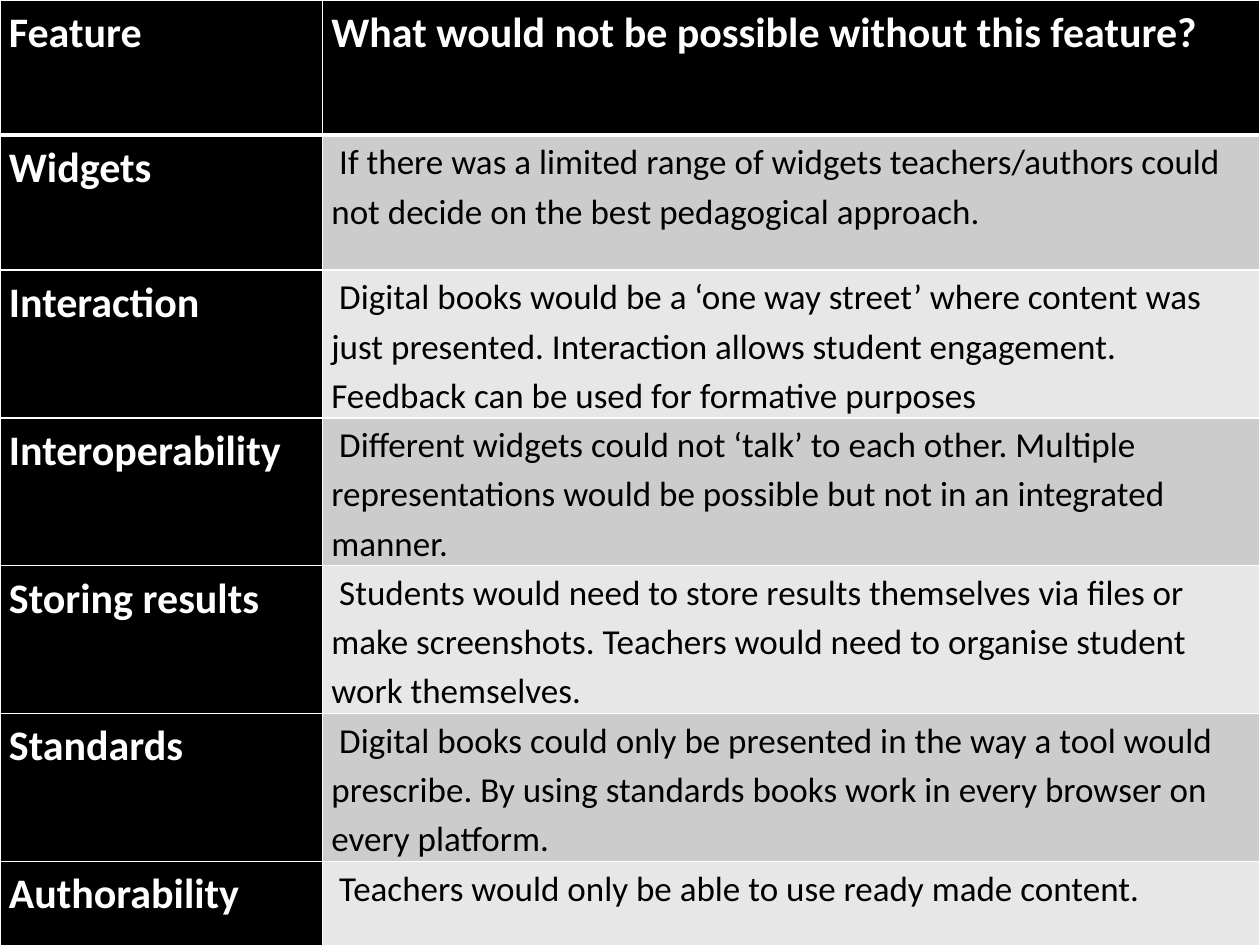
import pptx
import pptx.dml.color
import pptx.oxml
import pptx.oxml.ns
import pptx.util

Cm = pptx.util.Cm
Pt = pptx.util.Pt
RGBColor = pptx.dml.color.RGBColor

HEADER = ("Feature", "What would not be possible without this feature?")
FEATURES = [
    ("Widgets", " If there was a limited range of widgets teachers/authors could "
     "not decide on the best pedagogical approach."),
    ("Interaction", " Digital books would be a ‘one way street’ where content was "
     "just presented. Interaction allows student engagement. "
     "Feedback can be used for formative purposes"),
    ("Interoperability", " Different widgets could not ‘talk’ to each other. Multiple "
     "representations would be possible but not in an integrated manner."),
    ("Storing results", " Students would need to store results themselves via files or "
     "make screenshots. Teachers would need to organise student work themselves."),
    ("Standards", " Digital books could only be presented in the way a tool would "
     "prescribe. By using standards books work in every browser on every platform."),
    ("Authorability", " Teachers would only be able to use ready made content."),
]

BLACK = RGBColor(0x00, 0x00, 0x00)
WHITE = RGBColor(0xFF, 0xFF, 0xFF)
BANDS = (RGBColor(0xCC, 0xCC, 0xCC), RGBColor(0xE7, 0xE7, 0xE7))
FONT = "Calibri"
PAGE_WIDTH, PAGE_HEIGHT = Cm(25.4), Cm(19.05)
FEATURE_WIDTH = Cm(6.5)
SIDE_MARGIN = Cm(0.18)


def set_borders(cell, widths):
    properties = cell._tc.get_or_add_tcPr()
    for position, (side, width) in enumerate(widths.items()):
        properties.insert(position, pptx.oxml.parse_xml(
            f'<a:ln{side} {pptx.oxml.ns.nsdecls("a")} w="{Pt(width)}">'
            f'<a:solidFill><a:srgbClr val="{WHITE}"/></a:solidFill></a:ln{side}>'))


def format_cell(cell, text, fill, color, size, bold):
    cell.text_frame.text = text
    cell.margin_left = cell.margin_right = SIDE_MARGIN
    cell.margin_top = cell.margin_bottom = 0
    cell.fill.solid()
    cell.fill.fore_color.rgb = fill
    para = cell.text_frame.paragraphs[0]
    para.line_spacing = 1.15
    font = para.runs[0].font
    font.name, font.size, font.bold = FONT, Pt(size), bold
    font.color.rgb = color


def main():
    deck = pptx.Presentation()
    deck.slide_width, deck.slide_height = PAGE_WIDTH, PAGE_HEIGHT
    page = deck.slides.add_slide(deck.slide_layouts[6])
    rows = [HEADER] + FEATURES
    table = page.shapes.add_table(
        len(rows), len(HEADER), 0, 0, PAGE_WIDTH, PAGE_HEIGHT).table
    table.first_col = True
    table.columns[0].width = FEATURE_WIDTH
    table.columns[1].width = PAGE_WIDTH - FEATURE_WIDTH

    for row, texts in enumerate(rows):
        for column, text in enumerate(texts):
            cell = table.cell(row, column)
            if row == 0 or column == 0:
                format_cell(cell, text, BLACK, WHITE, 24, True)
            else:
                format_cell(cell, text, BANDS[(row - 1) % 2], BLACK, 20, False)
            set_borders(cell, {"L": 1, "R": 1,
                               "T": 3 if row == 1 else 1,
                               "B": 3 if row == 0 else 1})

    deck.save("out.pptx")


if __name__ == "__main__":
    main()
